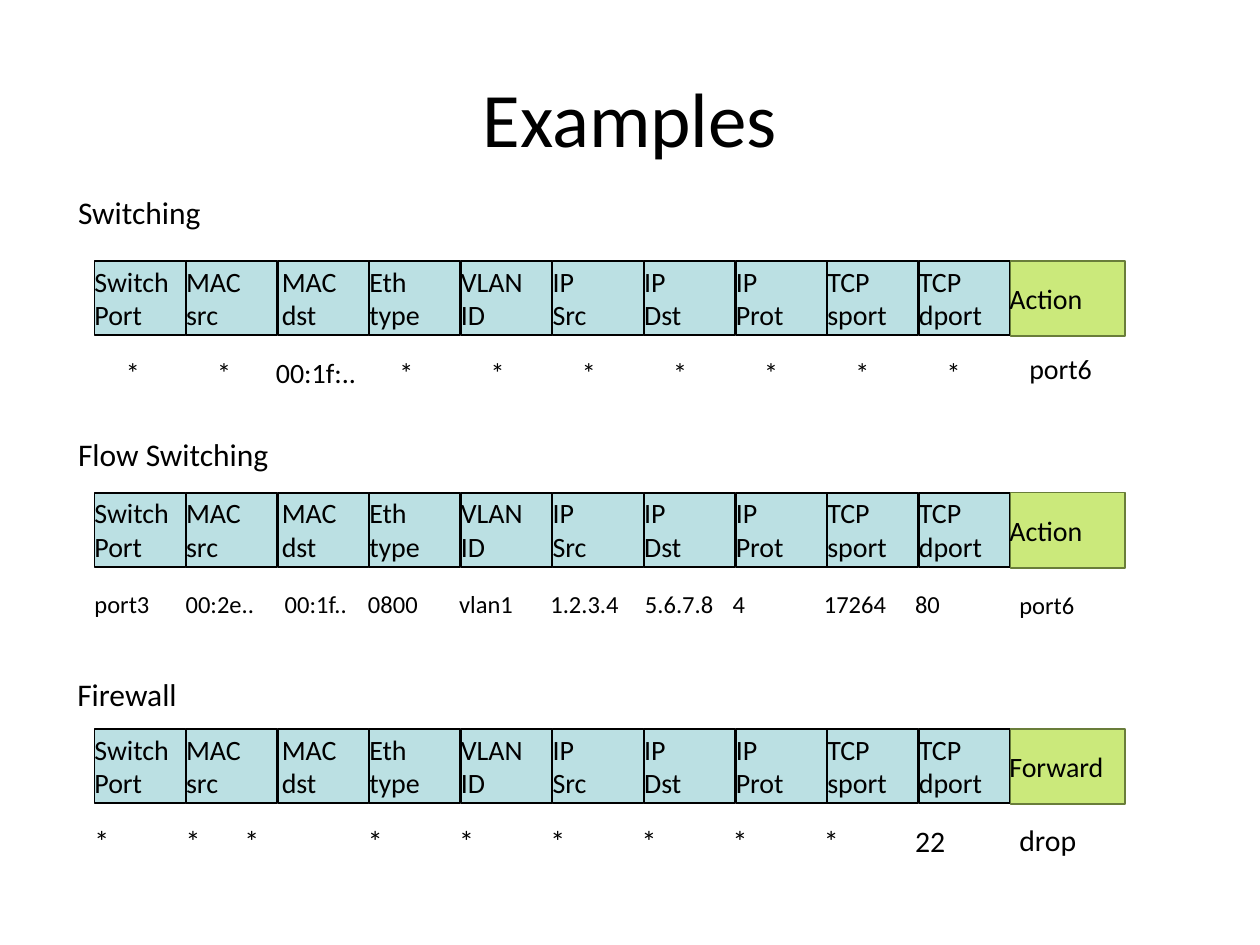
"""Build a slide of flow table examples with matching header rows."""
from dataclasses import dataclass, field

from pptx import Presentation
from pptx.dml.color import RGBColor
from pptx.enum import shapes as es, text as et
from pptx.util import Pt

LEFT, STEP, PITCH = 54, 52.35, 52.1
HEADS = ["Switch\nPort", "MAC\nsrc", "MAC\ndst", "Eth\ntype", "VLAN\nID",
         "IP\nSrc", "IP\nDst", "IP\nProt", "TCP\nsport", "TCP\ndport"]
FRAME = {"margin_left": 0, "margin_top": 0, "margin_right": 0,
         "margin_bottom": 0, "vertical_anchor": et.MSO_ANCHOR.MIDDLE}


@dataclass
class Box:
    x: float
    y: float
    w: float
    h: float

    def dims(self) -> list:
        return [Pt(v) for v in (self.x, self.y, self.w, self.h)]


@dataclass
class Rule:
    name: str
    label: Box
    top: float
    act: str
    cells: list
    size: float
    start: float
    end: Box
    result: str
    shifts: dict = field(default_factory=dict)


RULES = [
    Rule("Switching", Box(44.6, 110.2, 77.8, 21.6), 149, "Action",
         ["*", "*", "00:1f:.."] + ["*"] * 7, 16, 72,
         Box(588.2, 198, 52, 25.2), "port6", {2: -18.5}),
    Rule("Flow Switching", Box(44.6, 248.4, 121, 21.6), 281.5, "Action",
         ["port3", "00:2e..", "00:1f..", "0800", "vlan1", "1.2.3.4",
          "5.6.7.8", "4", "17264", "80"], 14, LEFT,
         Box(582.5, 332.7, 52, 25.2), "port6", {2: 4.5, 6: 2}),
    Rule("Firewall", Box(44.2, 385.9, 62.6, 21.6), 416.4, "Forward",
         ["*"] * 9 + ["22"], 17, LEFT,
         Box(582.5, 467.3, 52, 25.2), "drop", {2: -18.5}),
]


def paint(part, tone: str) -> None:
    """Give a fill or a font one solid colour."""
    if hasattr(part, "solid"):
        part.solid()
        part = part.fore_color
    else:
        part = part.color
    part.rgb = RGBColor.from_string(tone)


def style(frame, size: float) -> None:
    """Set the font of every paragraph in a frame."""
    for para in frame.paragraphs:
        for run in para.runs:
            for key, val in {"name": "Calibri", "size": Pt(size)}.items():
                setattr(run.font, key, val)
            paint(run.font, "000000")


def write(host, box: Box, words: str, size: float, label: bool = False) -> None:
    """Add a text box without margins."""
    frame = host.add_textbox(*box.dims()).text_frame
    fit = et.MSO_AUTO_SIZE.SHAPE_TO_FIT_TEXT if label else et.MSO_AUTO_SIZE.NONE
    for key, val in {**FRAME, "word_wrap": not label, "auto_size": fit}.items():
        setattr(frame, key, val)
    frame.text = words
    style(frame, size)


def block(host, box: Box, fill: str, edge: str) -> None:
    """Add a flat bordered rectangle."""
    rect = host.add_shape(es.MSO_SHAPE.RECTANGLE, *box.dims())
    rect.shadow.inherit = False
    paint(rect.fill, fill)
    paint(rect.line, edge)
    rect.line.width = Pt(1)


def header(host, top: float, act: str) -> None:
    """Draw the match fields and the action cell as one group."""
    group = host.add_group_shape().shapes
    for col, head in enumerate(HEADS):
        x = LEFT + col * STEP
        pad = 2.3 if head == "MAC\ndst" else 0
        block(group, Box(x, top, 52, 42.5), "BBE0E3", "000000")
        write(group, Box(x + pad, top - 1.2, 52 - pad, 44.6), head, 16)
    x = LEFT + len(HEADS) * STEP
    block(group, Box(x, top, 65.5, 43.2), "CBE97B", "697D3A")
    write(group, Box(x - 0.7, top + 8.7, 66.2, 25.2), act, 16)


def draw(host, rule: Rule) -> None:
    """Draw one example: label, header and values."""
    write(host, rule.label, rule.name, 18, label=True)
    header(host, rule.top, rule.act)
    for col, cell in enumerate(rule.cells):
        x = rule.start + col * PITCH + rule.shifts.get(col, 0)
        wide = 89.3 if col == 2 else 52
        write(host, Box(x, rule.top + 51.1, wide, 25.2), cell, rule.size)
    write(host, rule.end, rule.result, rule.size)


def main() -> None:
    """Make the deck and save it."""
    deck = Presentation()
    deck.slide_width, deck.slide_height = Pt(720), Pt(540)
    slide = deck.slides.add_slide(deck.slide_layouts[5])
    title = slide.shapes.title
    spot = zip(("left", "top", "width", "height"), Box(36, 21.6, 648, 90).dims())
    for key, val in spot:
        setattr(title, key, val)
    title.text_frame.text = "Examples"
    title.text_frame.vertical_anchor = et.MSO_ANCHOR.MIDDLE
    title.text_frame.paragraphs[0].alignment = et.PP_ALIGN.CENTER
    style(title.text_frame, 44)
    for rule in RULES:
        draw(slide.shapes, rule)
    deck.save("out.pptx")


if __name__ == "__main__":
    main()
